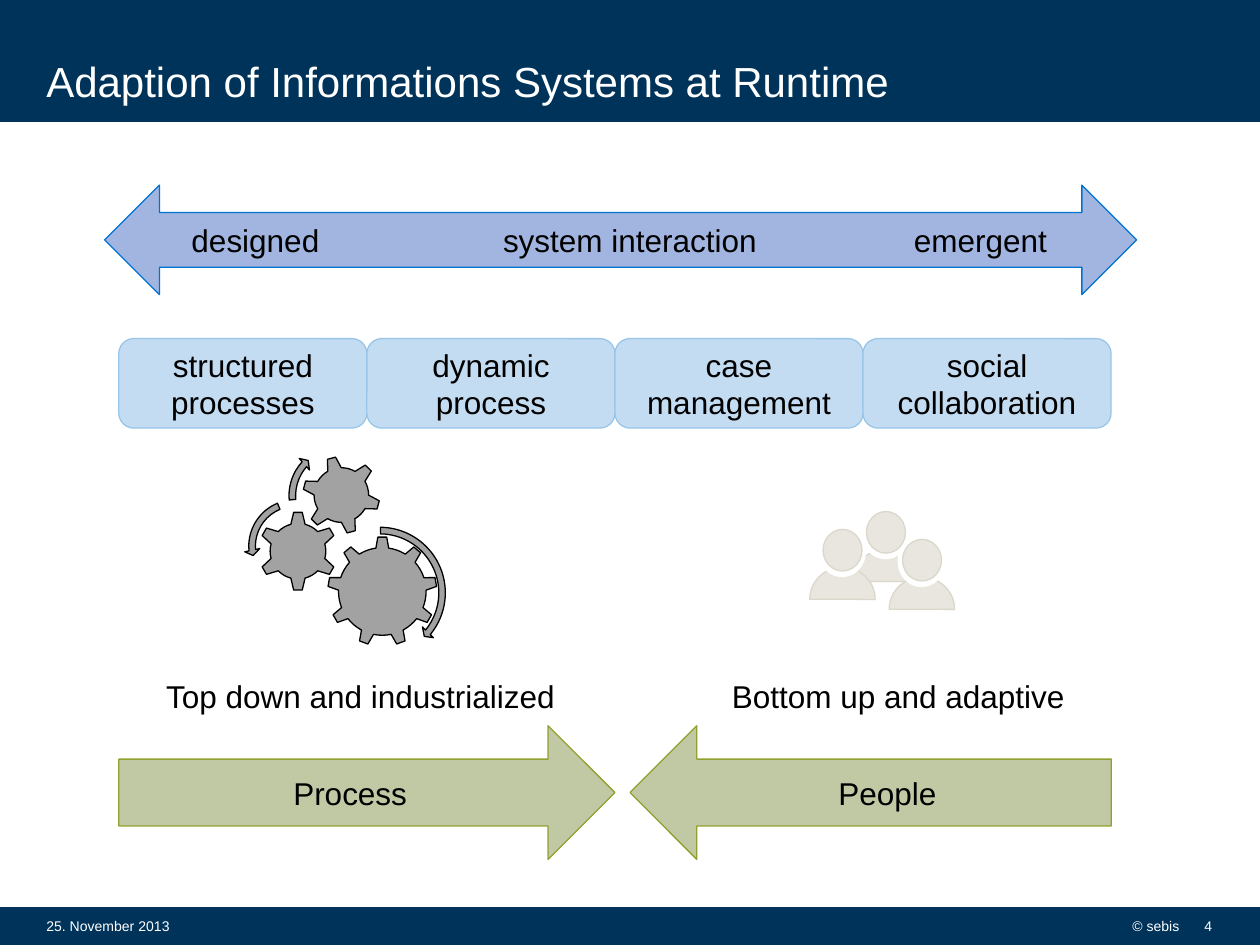
from pptx import Presentation
from pptx.dml.color import RGBColor
from pptx.enum.shapes import MSO_SHAPE
from pptx.enum.text import MSO_ANCHOR, PP_ALIGN
from pptx.oxml.ns import qn
from pptx.util import Pt
from lxml.etree import SubElement

NAVY = RGBColor(0x00, 0x33, 0x59)
WHITE = RGBColor(0xFF, 0xFF, 0xFF)
BLACK = RGBColor(0x00, 0x00, 0x00)
PERIWINKLE = RGBColor(0xA2, 0xB5, 0xE1)
BLUE = RGBColor(0x00, 0x73, 0xCF)
PALE_BLUE = RGBColor(0xC4, 0xDC, 0xF2)
SKY = RGBColor(0x98, 0xC6, 0xEA)
GREY = RGBColor(0xA2, 0xA2, 0xA2)
SAGE = RGBColor(0xC1, 0xC8, 0xA4)
OLIVE = RGBColor(0x91, 0xA0, 0x2F)
SAND = RGBColor(0xE8, 0xE6, 0xDF)
STONE = RGBColor(0xDA, 0xD7, 0xCB)


class SlideBuilder:
    font = "Arial"
    body_size = 18
    footer_size = 8

    def __init__(self, page):
        self.page = page

    def fill_frame(self, frame, text, size, color, align, anchor, wrap=True, tabs=()):
        frame.text = text
        frame.word_wrap = wrap
        frame.vertical_anchor = anchor
        para = frame.paragraphs[0]
        para.alignment = align
        if tabs:
            tab_list = SubElement(para._p.get_or_add_pPr(), qn("a:tabLst"))
            for position in tabs:
                SubElement(tab_list, qn("a:tab"), pos=str(Pt(position)), algn="ctr")
        for span in para.runs:
            span.font.name = self.font
            span.font.size = Pt(size)
            span.font.color.rgb = color

    def shape(self, kind, left, top, width, height, fill, line=None, weight=0.75,
              adjustments=(), rotation=0):
        box = self.page.shapes.add_shape(kind, Pt(left), Pt(top), Pt(width), Pt(height))
        box.shadow.inherit = False
        box.fill.solid()
        box.fill.fore_color.rgb = fill
        if line is None:
            box.line.fill.background()
        else:
            box.line.color.rgb = line
            box.line.width = Pt(weight)
        for index, value in enumerate(adjustments):
            box.adjustments[index] = value
        box.rotation = rotation
        return box

    def labelled(self, kind, left, top, width, height, fill, line, text,
                 align=PP_ALIGN.CENTER, wrap=True, tabs=()):
        box = self.shape(kind, left, top, width, height, fill, line)
        self.fill_frame(box.text_frame, text, self.body_size, BLACK, align,
                        MSO_ANCHOR.MIDDLE, wrap, tabs)

    def text(self, left, top, width, height, text, size, align=PP_ALIGN.LEFT,
             anchor=MSO_ANCHOR.MIDDLE, wrap=True):
        box = self.page.shapes.add_textbox(Pt(left), Pt(top), Pt(width), Pt(height))
        self.fill_frame(box.text_frame, text, size, WHITE, align, anchor, wrap)
        return box

    def person(self, left, top):
        self.shape(MSO_SHAPE.PIE, left, top, 37.4, 36.7, SAND, STONE,
                   adjustments=(108, 0.139))
        self.shape(MSO_SHAPE.OVAL, left + 4.8, top - 23.8, 27.4, 29.5, WHITE)
        self.shape(MSO_SHAPE.OVAL, left + 7.6, top - 21.6, 22.3, 23.8, SAND, STONE)


def main():
    deck = Presentation()
    deck.slide_width, deck.slide_height = Pt(720), Pt(540)
    page = deck.slides.add_slide(deck.slide_layouts[6])
    builder = SlideBuilder(page)

    builder.shape(MSO_SHAPE.RECTANGLE, 0, 519.1, 720, 20.9, NAVY, NAVY, 1.35)
    builder.shape(MSO_SHAPE.RECTANGLE, 0, 0.7, 720, 68.4, NAVY, NAVY, 1.35)
    title = builder.text(19.4, 3.6, 593.3, 56.9, "Adaption of Informations Systems at Runtime",
                         24, anchor=MSO_ANCHOR.BOTTOM)
    title.text_frame.margin_top = title.text_frame.margin_bottom = Pt(0)

    builder.labelled(MSO_SHAPE.LEFT_RIGHT_ARROW, 59.8, 105.8, 589.7, 62.6, PERIWINKLE, BLUE,
                     "\tdesigned\tsystem interaction\temergent",
                     PP_ALIGN.LEFT, tabs=(63.4, 277.4, 477.7))

    stages = ("structured processes", "dynamic process", "case management",
              "social collaboration")
    stage_width = 141.75
    for index, stage in enumerate(stages):
        builder.labelled(MSO_SHAPE.ROUNDED_RECTANGLE, 67.9 + index * stage_width, 193.5,
                         stage_width, 51.1, PALE_BLUE, SKY, stage)

    gears = (
        (MSO_SHAPE.GEAR_9, 187.2, 306.7, 62.6, 0),
        (MSO_SHAPE.GEAR_6, 147.6, 292.3, 45.4, 0),
        (MSO_SHAPE.GEAR_6, 172.8, 260.6, 44.6, 345),
    )
    for kind, left, top, size, rotation in gears:
        builder.shape(kind, left, top, size, size, GREY, BLACK, rotation=rotation)

    turns = (
        (MSO_SHAPE.CIRCULAR_ARROW, 177.1, 298.8, 79.9, (0.047, 2.99, 23.65, 162.375, 0.055)),
        (MSO_SHAPE.LEFT_CIRCULAR_ARROW, 139.7, 283, 58.3,
         (0.065, 4.3, 104.891, 148.378, 0.075)),
        (MSO_SHAPE.CIRCULAR_ARROW, 162.7, 252, 62.6, (0.06, 3.941, 133.138, 105.082, 0.07)),
    )
    for kind, left, top, size, adjustments in turns:
        builder.shape(kind, left, top, size, size, GREY, BLACK, adjustments=adjustments)

    directions = (
        (MSO_SHAPE.RIGHT_ARROW, 67.9, 283.5, "Process"),
        (MSO_SHAPE.LEFT_ARROW, 360, 275, "People"),
    )
    for kind, left, width, label in directions:
        builder.labelled(kind, left, 414.7, width, 76.4, SAGE, OLIVE, label)

    captions = (
        (87.8, 239, "Top down and industrialized"),
        (411.1, 206.6, "Bottom up and adaptive"),
    )
    for left, width, caption in captions:
        builder.labelled(MSO_SHAPE.RECTANGLE, left, 383.3, width, 29, WHITE, None, caption,
                         PP_ALIGN.LEFT, wrap=False)

    for left, top in ((487.5, 313.9), (462.7, 324.1), (508.1, 329.8)):
        builder.person(left, top)

    footers = (
        (19.4, 340.6, "25. November 2013", PP_ALIGN.LEFT, True),
        (554.4, 126.7, "© sebis", PP_ALIGN.RIGHT, False),
        (680.4, 19.4, "4", PP_ALIGN.RIGHT, False),
    )
    for left, width, footer, align, wrap in footers:
        builder.text(left, 517.3, width, 23, footer, builder.footer_size, align, wrap=wrap)

    deck.save("out.pptx")


if __name__ == "__main__":
    main()
